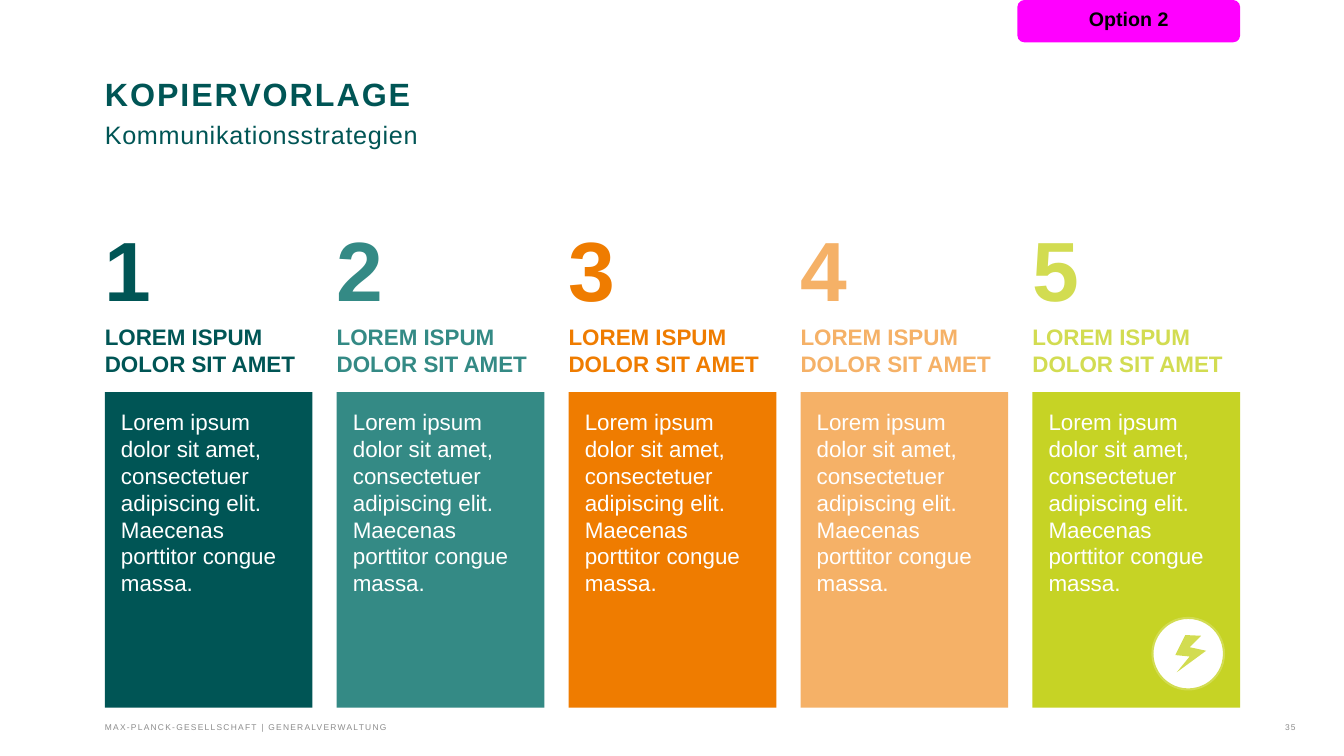
import dataclasses

import lxml.etree
import pptx
import pptx.dml.color
import pptx.enum.shapes
import pptx.enum.text
import pptx.oxml.ns
import pptx.util

SHAPE = pptx.enum.shapes.MSO_SHAPE
ANCHOR = pptx.enum.text.MSO_ANCHOR
ALIGN = pptx.enum.text.PP_ALIGN
Inches = pptx.util.Inches


@dataclasses.dataclass(frozen=True)
class Theme:
    font: str = "Arial"
    petrol: str = "005555"
    teal: str = "348A85"
    orange: str = "EF7C00"
    apricot: str = "F5B167"
    lime: str = "D2DC51"
    deep_lime: str = "C6D325"
    magenta: str = "FF00FF"
    grey: str = "8C8C8C"
    white: str = "FFFFFF"
    black: str = "000000"
    numeral_size: float = 60
    title_size: float = 23
    subtitle_size: float = 18
    body_size: float = 16
    tag_size: float = 14
    footer_size: float = 6


@dataclasses.dataclass(frozen=True)
class Grid:
    """Five equal columns; each row is (top, height) in inches."""
    left: float = 1.04
    width: float = 11.26
    columns: int = 5
    gutter: float = 0.24
    padding: float = 0.16
    tag: tuple = (0, 0.42)
    title: tuple = (0.76, 1.54)
    numeral: tuple = (2.15, 1.01)
    heading: tuple = (3.21, 0.54)
    panel: tuple = (3.89, 3.13)
    footer: tuple = (7.06, 0.2)

    @property
    def column_width(self):
        return (self.width - self.gutter * (self.columns - 1)) / self.columns

    def column_left(self, index):
        return self.left + index * (self.column_width + self.gutter)

    def cell(self, index, row):
        return self.column_left(index), row[0], self.column_width, row[1]


THEME = Theme()
GRID = Grid()

# Accent for numeral and heading, then fill of the panel
STRATEGIES = [
    (THEME.petrol, THEME.petrol),
    (THEME.teal, THEME.teal),
    (THEME.orange, THEME.orange),
    (THEME.apricot, THEME.apricot),
    (THEME.lime, THEME.deep_lime),
]
HEADING = "LOREM ISPUM DOLOR SIT AMET"
BODY = ("Lorem ipsum dolor sit amet, consectetuer adipiscing elit. "
        "Maecenas porttitor congue massa.")

# Outline of the bolt as shares of the badge
BOLT = [(0.75, 0.46), (0.52, 0.41), (0.68, 0.25), (0.46, 0.24),
        (0.32, 0.52), (0.52, 0.54), (0.34, 0.76)]


def rgb(value):
    return pptx.dml.color.RGBColor.from_string(value)


def add_run(paragraph, text, size, color, bold=False, spacing=None):
    run = paragraph.add_run()
    run.text = text
    run.font.name = THEME.font
    run.font.size = pptx.util.Pt(size)
    run.font.bold = bold
    run.font.color.rgb = rgb(color)
    if spacing:
        run.font._element.set("spc", str(round(spacing * 100)))


def frame_paragraph(holder, anchor=ANCHOR.TOP, insets=(0, 0, 0, 0), align=ALIGN.LEFT):
    """Set up the text frame and return its first paragraph."""
    frame = holder.text_frame
    frame.word_wrap = True
    frame.vertical_anchor = anchor
    (frame.margin_left, frame.margin_top,
     frame.margin_right, frame.margin_bottom) = map(Inches, insets)
    paragraph = frame.paragraphs[0]
    paragraph.alignment = align
    return paragraph


def add_label(slide, box, anchor=ANCHOR.TOP):
    return frame_paragraph(slide.shapes.add_textbox(*map(Inches, box)), anchor)


def paint(shape, fill, line=None):
    shape.shadow.inherit = False
    shape.fill.solid()
    shape.fill.fore_color.rgb = rgb(fill)
    if line:
        shape.line.color.rgb = rgb(line)
        shape.line.width = pptx.util.Pt(1.5)
    else:
        shape.line.fill.background()


def add_block(slide, kind, box, fill, line=None):
    block = slide.shapes.add_shape(kind, *map(Inches, box))
    paint(block, fill, line)
    return block


def add_right_tabs(paragraph, positions):
    qn = pptx.oxml.ns.qn
    tabs = lxml.etree.SubElement(paragraph._p.get_or_add_pPr(), qn("a:tabLst"))
    for position in positions:
        lxml.etree.SubElement(tabs, qn("a:tab"), pos=str(Inches(position)), algn="r")


def add_option_tag(slide):
    width = 2.21
    left = GRID.left + GRID.width - width
    tag = add_block(slide, SHAPE.ROUNDED_RECTANGLE,
                    (left, GRID.tag[0], width, GRID.tag[1]), THEME.magenta)
    pad = GRID.padding
    paragraph = frame_paragraph(tag, ANCHOR.MIDDLE, (pad, 0.12, pad, pad), ALIGN.CENTER)
    add_run(paragraph, "Option 2", THEME.tag_size, THEME.black, bold=True)


def add_title(slide):
    top, height = GRID.title
    title = add_label(slide, (GRID.left, top, GRID.width, height))
    title.line_spacing = pptx.util.Pt(26)
    add_run(title, "KOPIERVORLAGE", THEME.title_size, THEME.petrol, True, 1.4)
    title.add_line_break()
    add_run(title, "Kommunikationsstrategien", THEME.subtitle_size, THEME.petrol,
            spacing=0.5)


def add_strategy(slide, index, accent, fill):
    numeral = add_label(slide, GRID.cell(index, GRID.numeral), ANCHOR.BOTTOM)
    add_run(numeral, str(index + 1), THEME.numeral_size, accent, bold=True)

    heading = add_label(slide, GRID.cell(index, GRID.heading))
    add_run(heading, HEADING, THEME.body_size, accent, bold=True)

    panel = add_block(slide, SHAPE.RECTANGLE, GRID.cell(index, GRID.panel), fill)
    body = frame_paragraph(panel, insets=(GRID.padding,) * 4)
    add_run(body, BODY, THEME.body_size, THEME.white)


def add_bolt_badge(slide):
    """Round badge in the lower right corner of the last panel."""
    size = 0.71
    left = GRID.left + GRID.width - GRID.padding - size
    top = sum(GRID.panel) - GRID.padding - size - 0.02
    add_block(slide, SHAPE.OVAL, (left, top, size, size), THEME.white, THEME.lime)

    corners = [(Inches(left + x * size), Inches(top + y * size)) for x, y in BOLT]
    outline = slide.shapes.build_freeform(*corners[0])
    outline.add_line_segments(corners[1:], close=True)
    paint(outline.convert_to_shape(), THEME.lime)


def add_footer(slide):
    top, height = GRID.footer
    footer = add_label(slide, (GRID.left, top, 11.85, height), ANCHOR.BOTTOM)
    add_right_tabs(footer, (11.22, 11.81))
    add_run(footer, "MAX-PLANCK-GESELLSCHAFT | GENERALVERWALTUNG\t\t35",
            THEME.footer_size, THEME.grey, spacing=0.9)


def main():
    deck = pptx.Presentation()
    deck.slide_width = Inches(13.33)
    deck.slide_height = Inches(7.5)
    slide = deck.slides.add_slide(deck.slide_layouts[6])

    # Header
    add_option_tag(slide)
    add_title(slide)

    # Strategy columns
    for index, (accent, fill) in enumerate(STRATEGIES):
        add_strategy(slide, index, accent, fill)
    add_bolt_badge(slide)

    # Footer
    add_footer(slide)
    deck.save("out.pptx")


if __name__ == "__main__":
    main()
